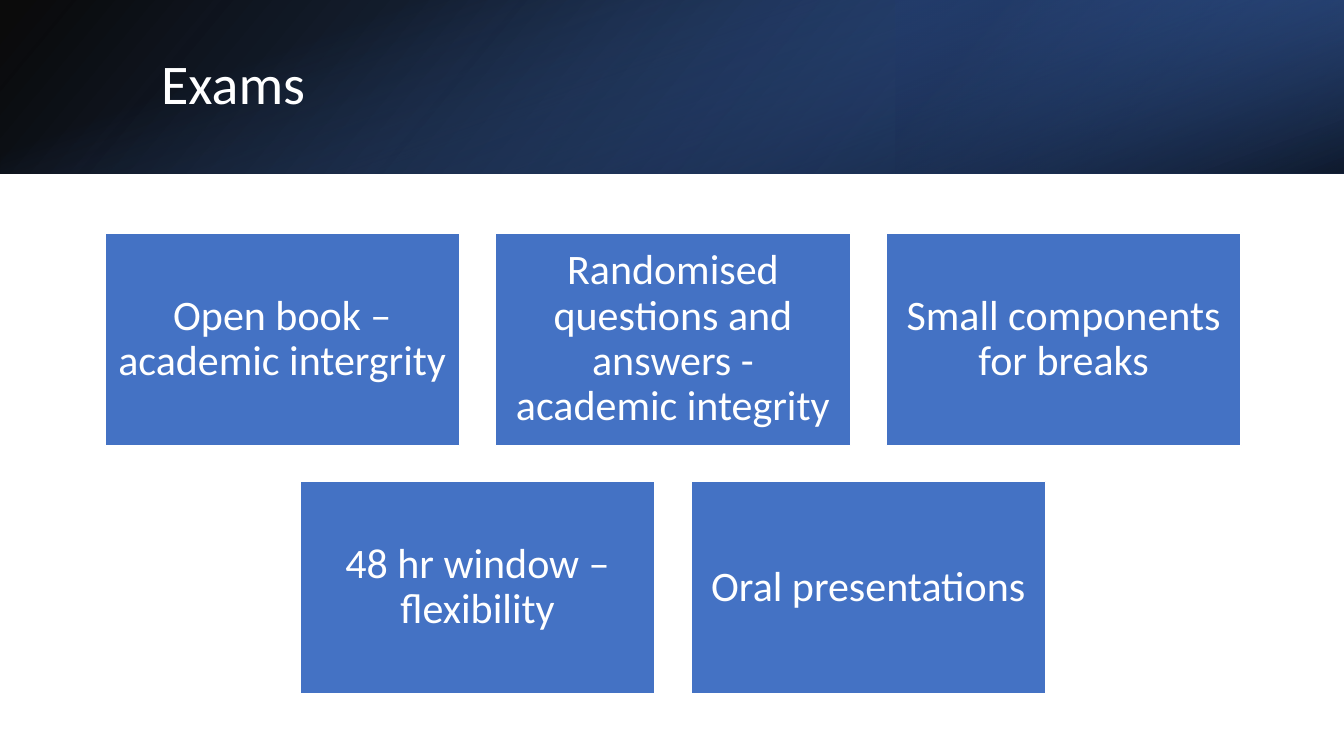
"""Build the Exams slide: a gradient title band above two centred rows of cards."""
from lxml import etree
from pptx import Presentation
from pptx.dml.color import RGBColor
from pptx.enum.shapes import MSO_SHAPE
from pptx.enum.text import MSO_ANCHOR, PP_ALIGN
from pptx.oxml import parse_xml
from pptx.util import Inches, Pt

RECT = MSO_SHAPE.RECTANGLE
MIDDLE = MSO_ANCHOR.MIDDLE
LEFT, CENTER = PP_ALIGN.LEFT, PP_ALIGN.CENTER
NS = "http://schemas.openxmlformats.org/drawingml/2006/main"

TITLE = "Exams"
CARD_ROWS = [
    ["Open book – academic intergrity",
     "Randomised questions and answers - academic integrity",
     "Small components for breaks"],
    ["48 hr window – flexibility", "Oral presentations"],
]
COLORS = {"white": "FFFFFF", "black": "000000", "blue": "4472C4",
          "mid": "2F5597", "navy": "203864"}
FONT = "Calibri"
W, H = 13.33, 7.5
BAND_H = 1.72
CARD_W, CARD_H, GAP = 3.52, 2.11, 0.355
CARDS_TOP, CARDS_CENTER = 2.31, 6.675

TURNED_X = (W - BAND_H) / 2
BAND_LAYERS = [
    {"at": (0, 0, W, BAND_H), "rot": 0, "flip": True, "angle": 140,
     "stops": [(0, "black", 96), (100, "mid", 100)]},
    {"at": (W * 2 / 3, 0, W / 3, BAND_H), "rot": 180, "flip": True, "angle": 320,
     "stops": [(19, "navy", 68), (100, "blue", 79)]},
    {"at": (TURNED_X, -TURNED_X, BAND_H, W), "rot": 90, "flip": False, "angle": 340,
     "stops": [(23, "blue", 0), (99, "black", 74)]},
]


def rgb(name):
    return RGBColor.from_string(COLORS[name])


def add_rect(slide, at):
    s = slide.shapes.add_shape(RECT, *map(Inches, at))
    s.shadow.inherit = False
    return s


def add_layer(slide, layer):
    s = add_rect(slide, layer["at"])
    s.rotation = layer["rot"]
    s.line.fill.background()
    stops = "".join(
        f'<a:gs pos="{pos * 1000}"><a:srgbClr val="{COLORS[color]}">'
        f'<a:alpha val="{alpha * 1000}"/></a:srgbClr></a:gs>'
        for pos, color, alpha in layer["stops"])
    grad = parse_xml(
        f'<a:gradFill xmlns:a="{NS}" rotWithShape="1"><a:gsLst>{stops}</a:gsLst>'
        f'<a:lin ang="{layer["angle"] * 60000}" scaled="0"/></a:gradFill>')
    sp_pr = s._element.spPr
    sp_pr.find(etree.QName(NS, "prstGeom")).addnext(grad)
    if layer["flip"]:
        sp_pr.find(etree.QName(NS, "xfrm")).set("flipH", "1")


def write(s, text, size, align, insets):
    tf = s.text_frame
    frame = {"word_wrap": True, "vertical_anchor": MIDDLE,
             **{f"margin_{side}": Inches(v) for side, v in insets.items()}}
    for name, value in frame.items():
        setattr(tf, name, value)
    p = tf.paragraphs[0]
    p.alignment, p.line_spacing = align, 0.9
    r = p.add_run()
    r.text = text
    for name, value in {"name": FONT, "size": Pt(size)}.items():
        setattr(r.font, name, value)
    r.font.color.rgb = rgb("white")


def add_card(slide, text, x, y):
    s = add_rect(slide, (x, y, CARD_W, CARD_H))
    s.fill.solid()
    s.fill.fore_color.rgb = rgb("blue")
    s.line.color.rgb = rgb("white")
    s.line.width = Pt(1)
    write(s, text, 30, CENTER, dict.fromkeys(("left", "top", "right", "bottom"), 0.12))


def main():
    prs = Presentation()
    prs.slide_width, prs.slide_height = Inches(W), Inches(H)
    slide = prs.slides.add_slide(prs.slide_layouts[6])
    for layer in BAND_LAYERS:
        add_layer(slide, layer)
    title = slide.shapes.add_textbox(*map(Inches, (1.5, 0.38, 10.98, 0.96)))
    write(title, TITLE, 40, LEFT, {"left": 0.1, "top": 0.05, "right": 0.1, "bottom": 0.05})
    for row, texts in enumerate(CARD_ROWS):
        row_w = len(texts) * (CARD_W + GAP) - GAP
        for col, text in enumerate(texts):
            add_card(slide, text, CARDS_CENTER - row_w / 2 + col * (CARD_W + GAP),
                     CARDS_TOP + row * (CARD_H + GAP))
    prs.save("out.pptx")


if __name__ == "__main__":
    main()
